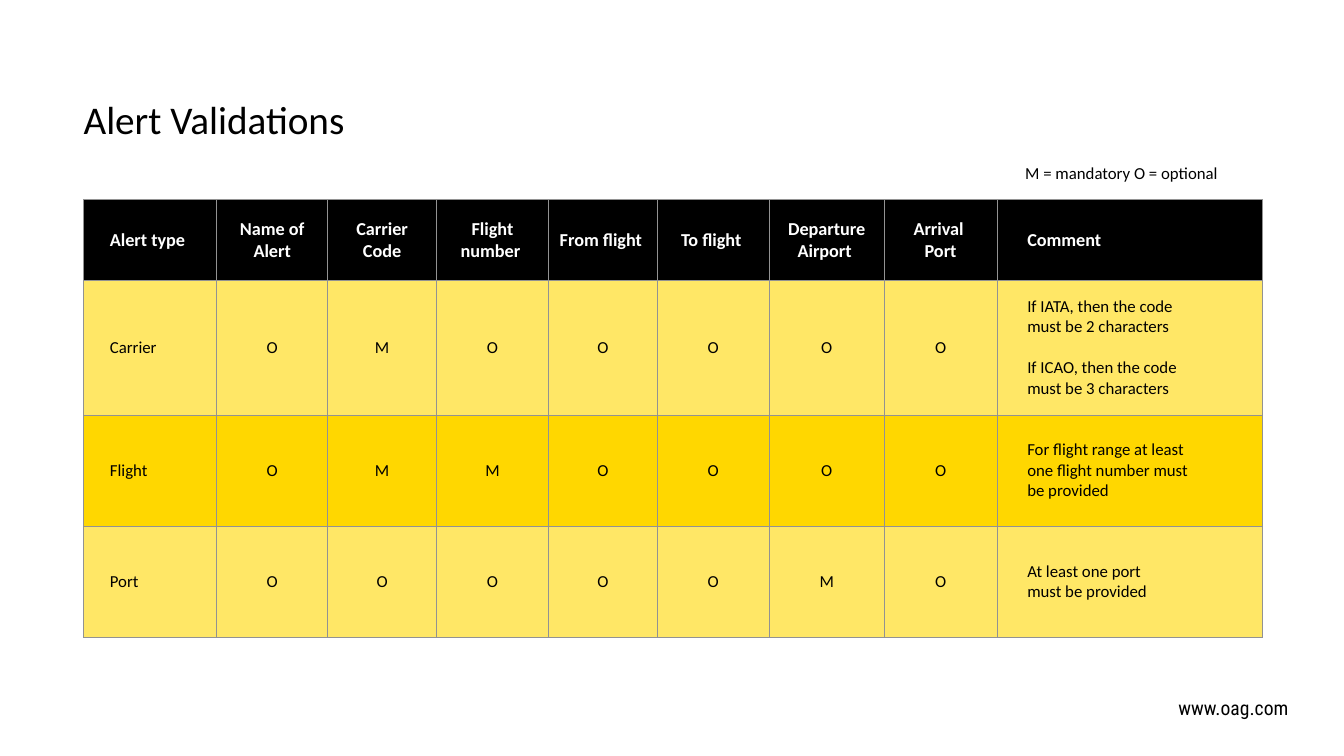
import pptx
import pptx.dml.color
import pptx.enum.text
import pptx.oxml
import pptx.oxml.ns
import pptx.util
from lxml import etree

Inches = pptx.util.Inches
Align = pptx.enum.text.PP_ALIGN
Anchor = pptx.enum.text.MSO_ANCHOR
qn = pptx.oxml.ns.qn

BLACK, WHITE, GREY = "000000", "FFFFFF", "929292"
PALE_YELLOW, YELLOW = "FFE766", "FFD700"

COLUMN_WIDTHS = [1.32, 1.1, 1.08, 1.11, 1.08, 1.11, 1.14, 1.12, 2.63]
ROW_HEIGHTS = [0.8, 1.34, 1.1, 1.1]
HEADINGS = ["Alert type", "Name of Alert", "Carrier Code", "Flight number ", "From flight ",
            "To flight ", "Departure Airport ", "Arrival \nPort", "Comment"]
ALERTS = [
    ("Carrier", "OMOOOOO", ["If IATA, then the code \nmust be 2 characters",
                            "If ICAO, then the code \nmust be 3 characters"]),
    ("Flight", "OMMOOOO", ["For flight range at least \none flight number must \nbe provided"]),
    ("Port", "OOOOOMO", ["At least one port \nmust be provided"]),
]


def rgb(value):
    return pptx.dml.color.RGBColor.from_string(value)


def write(frame, lines, font="Calibri", size=12, color=BLACK, bold=False,
          align=Align.LEFT, indent=0, spacing=None, gap=0):
    """Fill a text frame with one paragraph per line, with gap points between them."""
    for index, text in enumerate(lines):
        para = frame.add_paragraph() if index else frame.paragraphs[0]
        para.text = text
        para.alignment = align
        if spacing:
            para.line_spacing = spacing
        if index:
            para.space_before = pptx.util.Pt(gap)
        if indent:
            para._p.get_or_add_pPr().set("marL", str(Inches(indent)))
        for span in para.runs:
            span.font.name = font
            span.font.size = pptx.util.Pt(size)
            span.font.bold = bold
            span.font.color.rgb = rgb(color)
        for line_break in para._p.findall(qn("a:br")):
            etree.SubElement(line_break, qn("a:rPr"), sz=str(size * 100))


class AlertPage:
    def __init__(self, deck):
        self.page = deck.slides.add_slide(deck.slide_layouts[6])

    def text(self, text, left, top, width, height, margins=(0.1, 0.05, 0.1, 0.05),
             anchor=Anchor.MIDDLE, **style):
        box = self.page.shapes.add_textbox(Inches(left), Inches(top), Inches(width), Inches(height))
        frame = box.text_frame
        frame.word_wrap = True
        frame.vertical_anchor = anchor
        (frame.margin_left, frame.margin_top,
         frame.margin_right, frame.margin_bottom) = map(Inches, margins)
        write(frame, [text], **style)

    def cell(self, cell, lines, fill, **style):
        cell.vertical_anchor = Anchor.MIDDLE
        write(cell.text_frame, lines, **style)
        properties = cell._tc.get_or_add_tcPr()
        for side in ("a:lnL", "a:lnR", "a:lnT", "a:lnB"):
            border = etree.SubElement(properties, qn(side), w=str(pptx.util.Pt(0.5)))
            solid = etree.SubElement(border, qn("a:solidFill"))
            etree.SubElement(solid, qn("a:srgbClr"), val=GREY)
        cell.fill.solid()
        cell.fill.fore_color.rgb = rgb(fill)

    def table(self, left, top):
        rows = [[[heading] for heading in HEADINGS]]
        rows += [[[name], *([flag] for flag in flags), comment] for name, flags, comment in ALERTS]
        table = self.page.shapes.add_table(
            len(rows), len(HEADINGS), Inches(left), Inches(top),
            Inches(sum(COLUMN_WIDTHS)), Inches(sum(ROW_HEIGHTS))).table
        for column, width in zip(table.columns, COLUMN_WIDTHS):
            column.width = Inches(width)
        for row, height in zip(table.rows, ROW_HEIGHTS):
            row.height = Inches(height)

        indents = {0: 0.16, len(HEADINGS) - 1: 0.2}
        for row_index, row in enumerate(rows):
            if row_index == 0:
                style = dict(fill=BLACK, color=WHITE, size=13, bold=True)
            else:
                style = dict(fill=PALE_YELLOW if row_index % 2 else YELLOW, gap=14.6)
            for column_index, lines in enumerate(row):
                self.cell(table.cell(row_index, column_index), lines,
                          align=Align.LEFT if column_index in indents else Align.CENTER,
                          indent=indents.get(column_index, 0), **style)


def main():
    deck = pptx.Presentation()
    deck.slide_width, deck.slide_height = Inches(13.33), Inches(7.5)
    page = AlertPage(deck)
    page.text("www.oag.com", 11.07, 6.96, 1.71, 0.18, margins=(0, 0, 0, 0),
              font="Roboto Condensed", size=14, align=Align.RIGHT, spacing=0.7)
    page.text("Alert Validations", 0.83, 1, 6.63, 0.48, margins=(0, 0.05, 0.1, 0.05),
              size=28, spacing=0.7)
    page.table(0.83, 1.98)
    page.text("M = mandatory O = optional", 10.07, 1.57, 2.36, 0.3, anchor=Anchor.TOP)
    deck.save("out.pptx")


if __name__ == "__main__":
    main()
